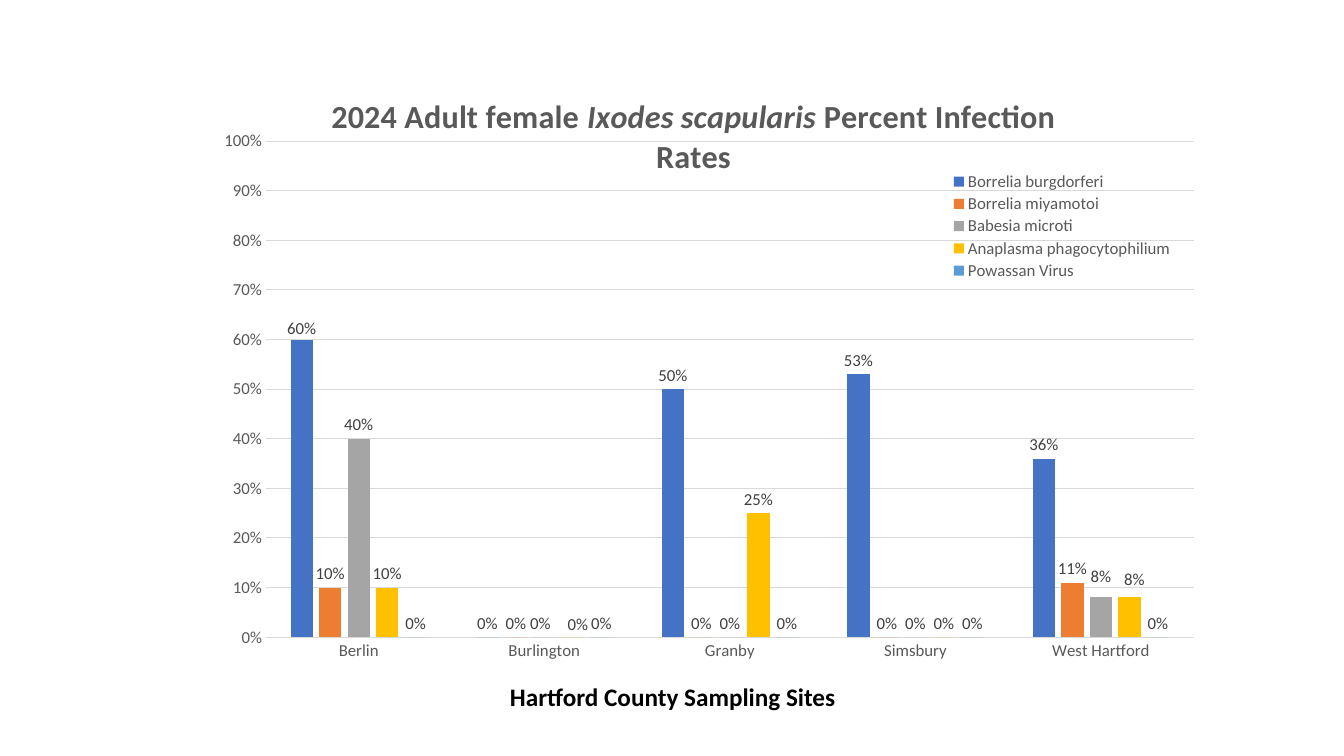
from lxml import etree
from pptx import Presentation
from pptx.chart import data as chart_data
from pptx.dml.color import RGBColor
from pptx.enum import chart as chart_enum, text as text_enum
from pptx.oxml import ns
from pptx.util import Inches, Pt

FONT = "Calibri"
COLORS = {
    "text": "000000",
    "muted": "595959",
    "label": "404040",
    "grid": "D9D9D9",
}
SITES = ["Berlin", "Burlington", "Granby", "Simsbury", "West Hartford"]
# Pathogen: (bar colour, infection rate at each site)
PATHOGENS = {
    "Borrelia burgdorferi": ("4472C4", [0.6, 0, 0.5, 0.53, 0.36]),
    "Borrelia miyamotoi": ("ED7D31", [0.1, 0, 0, 0, 0.11]),
    "Babesia microti": ("A5A5A5", [0.4, 0, 0, 0, 0.08]),
    "Anaplasma phagocytophilium": ("FFC000", [0.1, 0, 0.25, 0, 0.08]),
    "Powassan Virus": ("5B9BD5", [0, 0, 0, 0, 0]),
}
# (series, site): label shift as a percentage of the chart's width and height
LABEL_SHIFTS = {
    (0, 0): (0, 0.5),
    (2, 1): (-0.4, 0),
    (2, 4): (0, -1.2),
    (3, 1): (0.5, 0.2),
    (3, 4): (0.5, -0.6),
}


def style_font(font, size, color, bold=False):
    font.name = FONT
    font.size = Pt(size)
    font.bold = bold
    font.color.rgb = RGBColor.from_string(COLORS[color])


def style_line(line):
    line.color.rgb = RGBColor.from_string(COLORS["grid"])
    line.width = Pt(0.75)


def set_layout(element, index, **values):
    """Give a chart part a manual layout, as fractions of the chart."""
    for old_layout in element.findall(ns.qn("c:layout")):
        element.remove(old_layout)
    layout = etree.Element(ns.qn("c:layout"))
    manual = etree.SubElement(layout, ns.qn("c:manualLayout"))
    for name, value in values.items():
        etree.SubElement(manual, ns.qn(f"c:{name}")).set("val", str(value))
    element.insert(index, layout)


def add_title(chart):
    chart.has_title = True
    paragraph = chart.chart_title.text_frame.paragraphs[0]
    for words, italic in (("2024 Adult female ", False),
                          ("Ixodes scapularis", True),
                          (" Percent Infection Rates", False)):
        run = paragraph.add_run()
        run.text = words
        style_font(run.font, 23, "muted", bold=True)
        run.font.italic = italic
    set_layout(chart.chart_title.element, 1,
               xMode="edge", yMode="edge", x=0.12, y=0.02)


def style_axes(chart):
    for axis in (chart.category_axis, chart.value_axis):
        axis.major_tick_mark = chart_enum.XL_TICK_MARK.NONE
        axis.minor_tick_mark = chart_enum.XL_TICK_MARK.NONE
        style_font(axis.tick_labels.font, 12, "muted")
    style_line(chart.category_axis.format.line)

    rate_axis = chart.value_axis
    rate_axis.minimum_scale, rate_axis.maximum_scale = 0, 1
    rate_axis.major_unit = 0.1
    rate_axis.format.line.fill.background()
    rate_axis.has_major_gridlines = True
    style_line(rate_axis.major_gridlines.format.line)
    rate_axis.tick_labels.number_format = "0%"
    rate_axis.tick_labels.number_format_is_linked = False


def style_series(plot):
    plot.gap_width, plot.overlap = 219, -27
    plot.vary_by_categories = False
    for series, (color, _) in zip(plot.series, PATHOGENS.values()):
        series.format.fill.solid()
        series.format.fill.fore_color.rgb = RGBColor.from_string(color)
        labels = series.data_labels
        labels.show_value = True
        labels.number_format = "0%"
        labels.number_format_is_linked = False
        labels.position = chart_enum.XL_LABEL_POSITION.OUTSIDE_END
        style_font(labels.font, 12, "label")


def shift_labels(chart):
    for (series, site), (right, down) in LABEL_SHIFTS.items():
        label = chart.plots[0].series[series].points[site].data_label
        style_font(label.font, 12, "label")
        label.position = chart_enum.XL_LABEL_POSITION.OUTSIDE_END
        element = chart.element.xpath(
            f".//c:ser[c:idx/@val='{series}']//c:dLbl[c:idx/@val='{site}']")[0]
        set_layout(element, 1, x=right / 100, y=down / 100)


def add_legend(chart):
    chart.has_legend = True
    chart.legend.position = chart_enum.XL_LEGEND_POSITION.RIGHT
    chart.legend.include_in_layout = False
    style_font(chart.legend.font, 12, "muted")
    set_layout(chart.element.xpath(".//c:legend")[0], 1,
               xMode="edge", yMode="edge", x=0.73, y=0.15, w=0.24, h=0.19)


def add_infection_chart(slide):
    rates = chart_data.CategoryChartData(number_format="0%")
    rates.categories = SITES
    for pathogen, (_, values) in PATHOGENS.items():
        rates.add_series(pathogen, values)
    chart = slide.shapes.add_chart(
        chart_enum.XL_CHART_TYPE.COLUMN_CLUSTERED,
        Inches(2.06), Inches(0.79), Inches(9.97), Inches(5.93), rates).chart
    style_font(chart.font, 10, "text")
    add_title(chart)
    style_axes(chart)
    style_series(chart.plots[0])
    shift_labels(chart)
    add_legend(chart)
    set_layout(chart.element.xpath(".//c:plotArea")[0], 0,
               layoutTarget="inner", xMode="edge", yMode="edge",
               x=0.058, y=0.103, w=0.923, h=0.83)


def add_caption(slide, words):
    shape = slide.shapes.add_textbox(
        Inches(4.96), Inches(6.71), Inches(3.46), Inches(0.4))
    text_frame = shape.text_frame
    text_frame.text = words
    text_frame.word_wrap = False
    text_frame.auto_size = text_enum.MSO_AUTO_SIZE.SHAPE_TO_FIT_TEXT
    style_font(text_frame.paragraphs[0].runs[0].font, 18, "text", bold=True)


def main():
    presentation = Presentation()
    presentation.slide_width = Inches(13.33)
    presentation.slide_height = Inches(7.5)
    slide = presentation.slides.add_slide(presentation.slide_layouts[6])
    add_infection_chart(slide)
    add_caption(slide, "Hartford County Sampling Sites")
    presentation.save("out.pptx")


if __name__ == "__main__":
    main()
